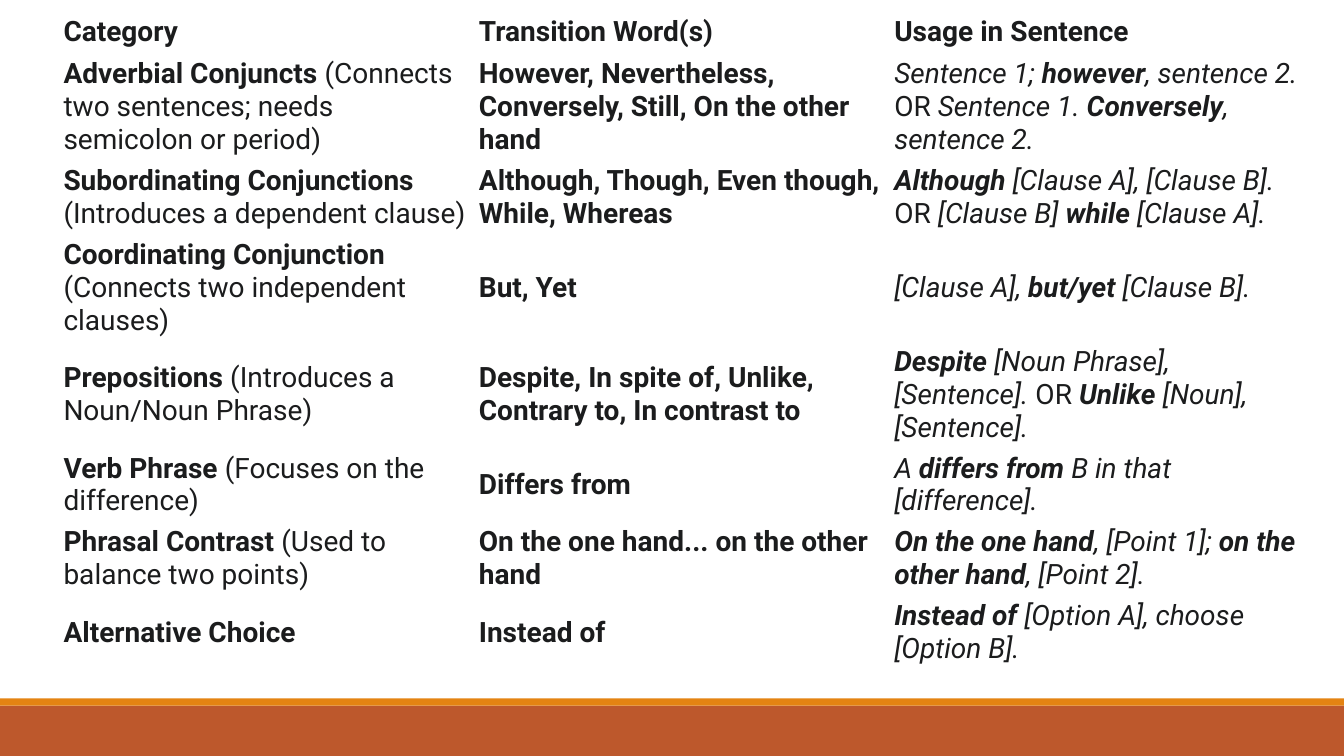
"""Build a slide with a table of transition words for contrast."""
from lxml import etree
from pptx import Presentation
from pptx import util as u
from pptx.dml.color import RGBColor
from pptx.enum import shapes, text
from pptx.oxml import ns

INK = RGBColor(0x1B, 0x1C, 0x1D)
WHITE = RGBColor(0xFF, 0xFF, 0xFF)
RUST = RGBColor(0xBD, 0x58, 0x2C)
ORANGE = RGBColor(0xE4, 0x83, 0x12)

PLAIN = {"bold": False, "italic": False}
BOLD = {"bold": True, "italic": False}
ITALIC = {"bold": False, "italic": True}
BOTH = {"bold": True, "italic": True}

HEADINGS = ["Category", "Transition Word(s)", "Usage in Sentence"]
ENTRIES = [
    ("Adverbial Conjuncts", " (Connects two sentences; needs semicolon or period)",
     "However, Nevertheless, Conversely, Still, On the other hand",
     [("Sentence 1; ", ITALIC), ("however", BOTH), (", sentence 2.", ITALIC), (" OR ", PLAIN),
      ("Sentence 1. ", ITALIC), ("Conversely", BOTH), (", sentence 2.", ITALIC)]),
    ("Subordinating Conjunctions", " (Introduces a dependent clause)",
     "Although, Though, Even though, While, Whereas",
     [("Although", BOTH), (" [Clause A], [Clause B].", ITALIC), (" OR ", PLAIN),
      ("[Clause B] ", ITALIC), ("while", BOTH), (" [Clause A].", ITALIC)]),
    ("Coordinating Conjunction", " (Connects two independent clauses)",
     "But, Yet",
     [("[Clause A], ", ITALIC), ("but/yet", BOTH), (" [Clause B].", ITALIC)]),
    ("Prepositions", " (Introduces a Noun/Noun Phrase)",
     "Despite, In spite of, Unlike, Contrary to, In contrast to",
     [("Despite", BOTH), (" [Noun Phrase], [Sentence].", ITALIC), (" OR ", PLAIN),
      ("Unlike", BOTH), (" [Noun], [Sentence].", ITALIC)]),
    ("Verb Phrase", " (Focuses on the difference)",
     "Differs from",
     [("A ", ITALIC), ("differs from", BOTH), (" B in that [difference].", ITALIC)]),
    ("Phrasal Contrast", " (Used to balance two points)",
     "On the one hand... on the other hand",
     [("On the one hand", BOTH), (", [Point 1]; ", ITALIC),
      ("on the other hand", BOTH), (", [Point 2].", ITALIC)]),
    ("Alternative Choice", "",
     "Instead of",
     [("Instead of", BOTH), (" [Option A], choose [Option B].", ITALIC)]),
]
ROW_HEIGHTS = [0.42, 1.04, 0.73, 1.04, 1.04, 0.73, 0.73, 0.73]


class SlideBuilder:
    """Hold the style and the current slide, and add elements to it."""

    font = {"name": "Roboto", "size": u.Pt(20)}
    cell_format = {
        "vertical_anchor": text.MSO_ANCHOR.MIDDLE,
        "margin_left": u.Inches(0.06), "margin_right": u.Inches(0.06),
        "margin_top": u.Inches(0.04), "margin_bottom": u.Inches(0.04),
    }

    def __init__(self, slide):
        """Keep the slide that receives the elements."""
        self.slide = slide

    def band(self, top, height, color):
        """Add a full-width coloured band."""
        shape = self.slide.shapes.add_shape(
            shapes.MSO_SHAPE.RECTANGLE, 0, u.Inches(top), u.Inches(13.33), u.Inches(height))
        shape.shadow.inherit = False
        shape.fill.solid()
        shape.fill.fore_color.rgb = color
        shape.line.fill.background()

    def table(self, left, top, column_width, row_heights, rows):
        """Add a table whose cells are lists of (text, format) runs."""
        columns = len(rows[0])
        table = self.slide.shapes.add_table(
            len(rows), columns, u.Inches(left), u.Inches(top),
            u.Inches(column_width * columns), u.Inches(sum(row_heights))).table
        table.first_row = table.horz_banding = False
        for column in table.columns:
            column.width = u.Inches(column_width)
        for row, height, cells in zip(table.rows, row_heights, rows):
            row.height = u.Inches(height)
            for cell, runs in zip(row.cells, cells):
                self.cell(cell, runs)

    def cell(self, cell, runs):
        """Format one cell and write its runs."""
        for name, value in self.cell_format.items():
            setattr(cell, name, value)
        self.borders(cell)
        cell.fill.background()
        paragraph = cell.text_frame.paragraphs[0]
        for words, style in runs:
            run = paragraph.add_run()
            run.text = words
            for name, value in {**self.font, **style}.items():
                setattr(run.font, name, value)
            run.font.color.rgb = INK

    def borders(self, cell):
        """Draw thin white lines on all sides of a cell."""
        properties = cell._tc.get_or_add_tcPr()
        for side in ("a:lnL", "a:lnR", "a:lnT", "a:lnB"):
            line = etree.SubElement(properties, ns.qn(side), w=str(u.Pt(0.5)))
            fill = etree.SubElement(line, ns.qn("a:solidFill"))
            etree.SubElement(fill, ns.qn("a:srgbClr"), val=str(WHITE))


def main():
    """Build and save the presentation."""
    presentation = Presentation()
    presentation.slide_width = u.Inches(13.33)
    presentation.slide_height = u.Inches(7.5)
    builder = SlideBuilder(presentation.slides.add_slide(presentation.slide_layouts[6]))
    builder.band(7, 0.5, RUST)
    builder.band(6.93, 0.07, ORANGE)
    rows = [[[(heading, BOLD)] for heading in HEADINGS]]
    for category, note, words, usage in ENTRIES:
        label = [(category, BOLD)] + ([(note, PLAIN)] if note else [])
        rows.append([label, [(words, BOLD)], usage])
    builder.table(0.57, 0.11, 4.12, ROW_HEIGHTS, rows)
    presentation.save("out.pptx")


if __name__ == "__main__":
    main()
